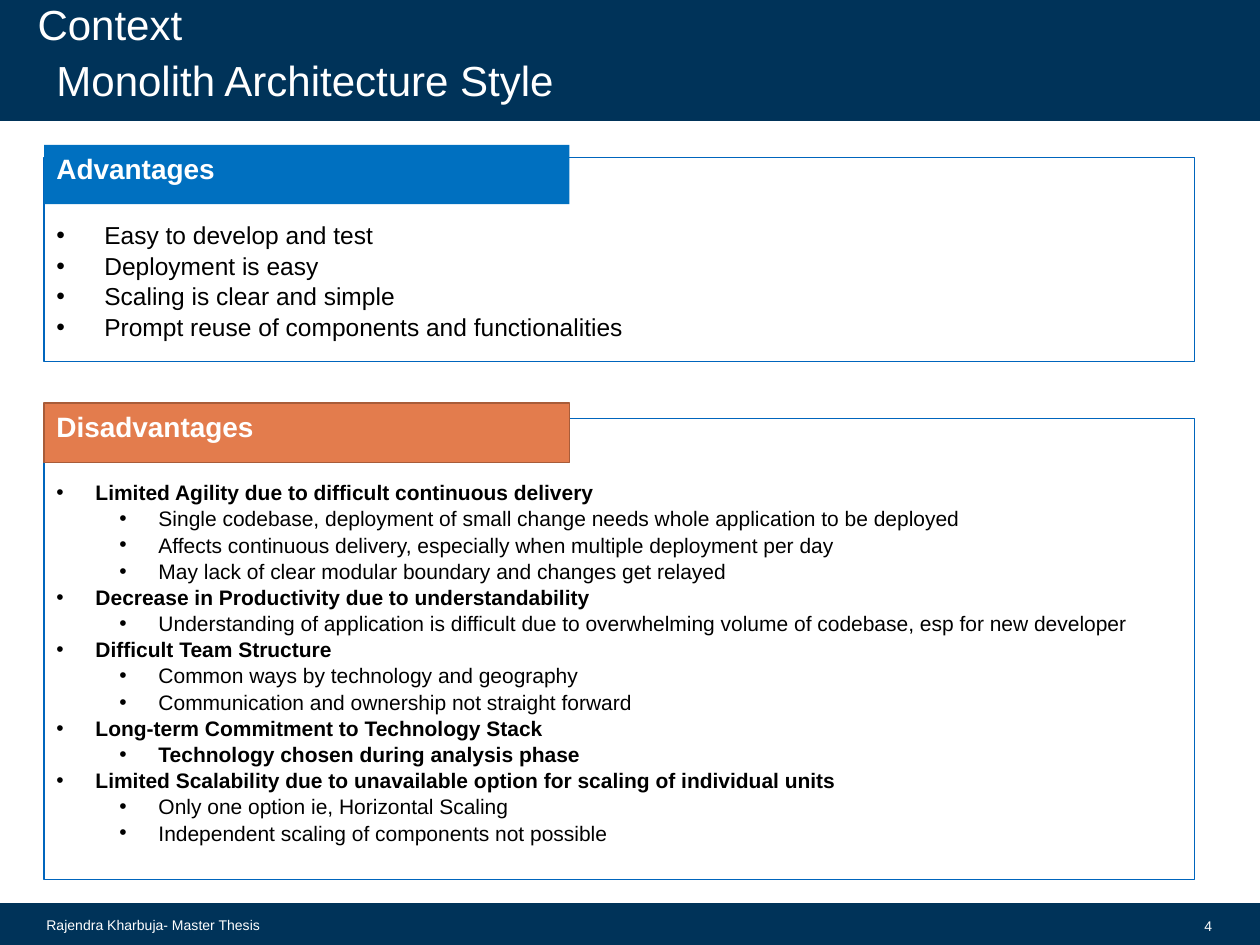
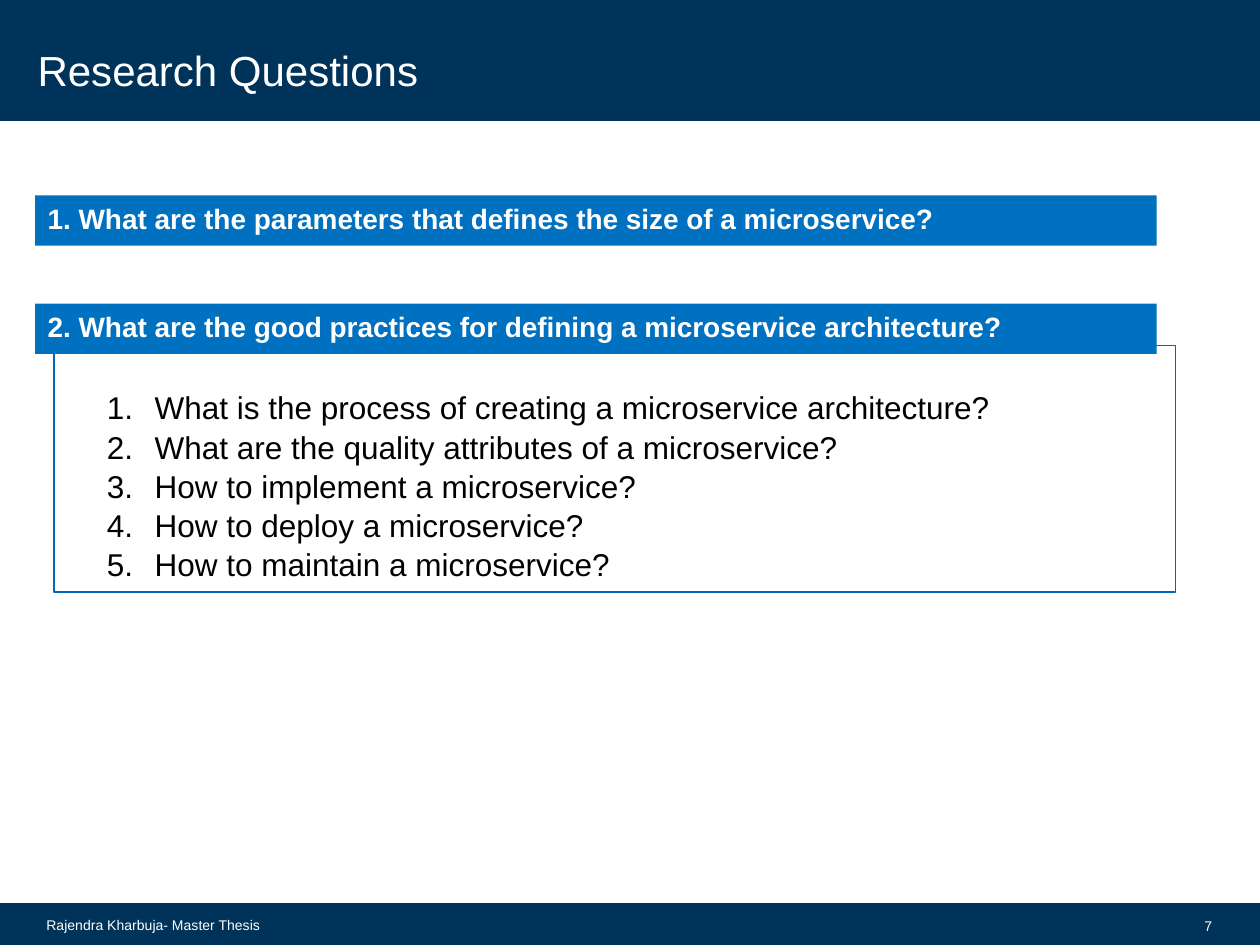
from dataclasses import dataclass

from lxml.etree import SubElement
from pptx import Presentation
from pptx.dml.color import RGBColor as Rgb
from pptx.enum.shapes import MSO_SHAPE as Shape
from pptx.enum.text import MSO_ANCHOR as Anchor, PP_ALIGN as Align
from pptx.oxml.ns import qn
from pptx.util import Inches, Pt


@dataclass(frozen=True)
class Theme:
    font: str = "Arial"
    navy: str = "003359"
    blue: str = "0070C0"
    edge: str = "0065BD"
    coral: str = "E37C4D"
    rust: str = "A85C39"
    white: str = "FFFFFF"
    black: str = "000000"
    title: int = 24
    head: int = 16
    foot: int = 8
    large: int = 18
    mid: int = 14
    small: int = 12
    pitch: float = 1.04


class Deck:
    """Draws the thesis slides in one shared style."""

    def __init__(self, theme):
        self.theme = theme
        self.show = Presentation()
        self.show.slide_width, self.show.slide_height = Inches(10), Inches(7.5)

    def start(self, title, top, number):
        look = self.theme
        self.slide = self.show.slides.add_slide(self.show.slide_layouts[6])
        for y, height in ((7.18, 0.32), (0, 0.95)):
            self.rect((0, y, 10, height), look.navy, look.navy, 1.35)
        self.title(title, 0.2, top)
        self.label("Rajendra Kharbuja- Master Thesis", (0.27, 7.18, 2.13, 0.32))
        self.label(number, (9.22, 7.19, 0.5, 0.32), Align.RIGHT)

    def rect(self, box, fill=None, line=None, width=0.75):
        shape = self.slide.shapes.add_shape(Shape.RECTANGLE, *map(Inches, box))
        shape.shadow.inherit = False
        if fill:
            shape.fill.solid()
            shape.fill.fore_color.rgb = Rgb.from_string(fill)
        else:
            shape.fill.background()
        if line:
            shape.line.color.rgb = Rgb.from_string(line)
            shape.line.width = Pt(width)
        else:
            shape.line.fill.background()
        return shape

    def frame(self, box, anchor=Anchor.TOP):
        frame = self.slide.shapes.add_textbox(*map(Inches, box)).text_frame
        frame.word_wrap = True
        frame.vertical_anchor = anchor
        return frame

    def add_text(self, para, text, size, color, bold=False):
        run = para.add_run()
        run.text = text
        run.font.name = self.theme.font
        run.font.size = Pt(size)
        run.font.bold = bold
        run.font.color.rgb = Rgb.from_string(color)

    def title(self, text, left, top):
        frame = self.frame((left, top, 8.24, 0.39), Anchor.BOTTOM)
        frame.margin_top = frame.margin_bottom = 0
        self.add_text(frame.paragraphs[0], text, self.theme.title, self.theme.white)

    def label(self, text, box, align=Align.LEFT):
        para = self.frame(box, Anchor.MIDDLE).paragraphs[0]
        para.alignment = align
        self.add_text(para, text, self.theme.foot, self.theme.white)

    def banner(self, text, box, fill, line=None):
        frame = self.rect(box, fill, line, 0.85).text_frame
        frame.vertical_anchor = Anchor.TOP
        para = frame.paragraphs[0]
        para.alignment = Align.LEFT
        self.add_text(para, text, self.theme.head, self.theme.white, True)

    def bullets(self, items, box, size, indent, count=False):
        frame = self.frame(box)
        for place, (level, bold, text) in enumerate(items):
            para = frame.add_paragraph() if place else frame.paragraphs[0]
            para.level = level
            props = para._p.get_or_add_pPr()
            props.set("marL", str(Inches(indent + level * 0.5)))
            props.set("indent", str(-Inches(indent)))
            SubElement(props, qn("a:buFont"), typeface=self.theme.font)
            if count:
                SubElement(props, qn("a:buAutoNum"), type="arabicPeriod")
            else:
                SubElement(props, qn("a:buChar"), char="•")
            para.line_spacing = self.theme.pitch
            self.add_text(para, text, size, self.theme.black, bold)


PROS = [
    "Easy to develop and test",
    "Deployment is easy",
    "Scaling is clear and simple",
    "Prompt reuse of components and functionalities",
]
CONS = [
    (0, True, "Limited Agility due to difficult continuous delivery"),
    (1, False, "Single codebase, deployment of small change needs whole application to be deployed"),
    (1, False, "Affects continuous delivery, especially when multiple deployment per day"),
    (1, False, "May lack of clear modular boundary and changes get relayed"),
    (0, True, "Decrease in Productivity due to understandability"),
    (1, False, "Understanding of application is difficult due to overwhelming volume of codebase, "
               "esp for new developer"),
    (0, True, "Difficult Team Structure"),
    (1, False, "Common ways by technology and geography"),
    (1, False, "Communication and ownership not straight forward"),
    (0, True, "Long-term Commitment to Technology Stack"),
    (1, True, "Technology chosen during analysis phase"),
    (0, True, "Limited Scalability due to unavailable option for scaling of individual units"),
    (1, False, "Only one option ie, Horizontal Scaling"),
    (1, False, "Independent scaling of components not possible"),
]
ASKS = [
    "What is the process of creating a microservice architecture?",
    "What are the quality attributes of a microservice?",
    "How to implement a microservice?",
    "How to deploy a microservice?",
    "How to maintain a microservice?",
]


def plain(lines):
    return [(0, False, line) for line in lines]


def main():
    look = Theme()
    deck = Deck(look)

    deck.start("Context", 0, "4")
    deck.title("Monolith Architecture Style", 0.35, 0.44)
    deck.rect((0.35, 1.25, 9.13, 1.62), line=look.edge)
    deck.banner("Advantages", (0.35, 1.15, 4.17, 0.47), look.blue)
    deck.bullets(plain(PROS), (0.35, 1.69, 6.67, 1.35), look.mid, 0.38)
    deck.rect((0.35, 3.32, 9.13, 3.66), line=look.edge)
    deck.banner("Disadvantages", (0.35, 3.2, 4.17, 0.47), look.coral, look.rust)
    deck.bullets(CONS, (0.35, 3.75, 8.8, 3.23), look.small, 0.31)

    deck.start("Research Questions", 0.36, "7")
    deck.rect((0.43, 2.74, 8.9, 1.96), line=look.edge)
    deck.banner("2. What are the good practices for defining a microservice architecture?",
                (0.28, 2.41, 8.9, 0.4), look.blue)
    deck.bullets(plain(ASKS), (0.75, 3.02, 7.8, 1.62), look.large, 0.38, count=True)
    deck.banner("1. What are the parameters that defines the size of a microservice?",
                (0.28, 1.55, 8.9, 0.4), look.blue)

    deck.show.save("out.pptx")


if __name__ == "__main__":
    main()
